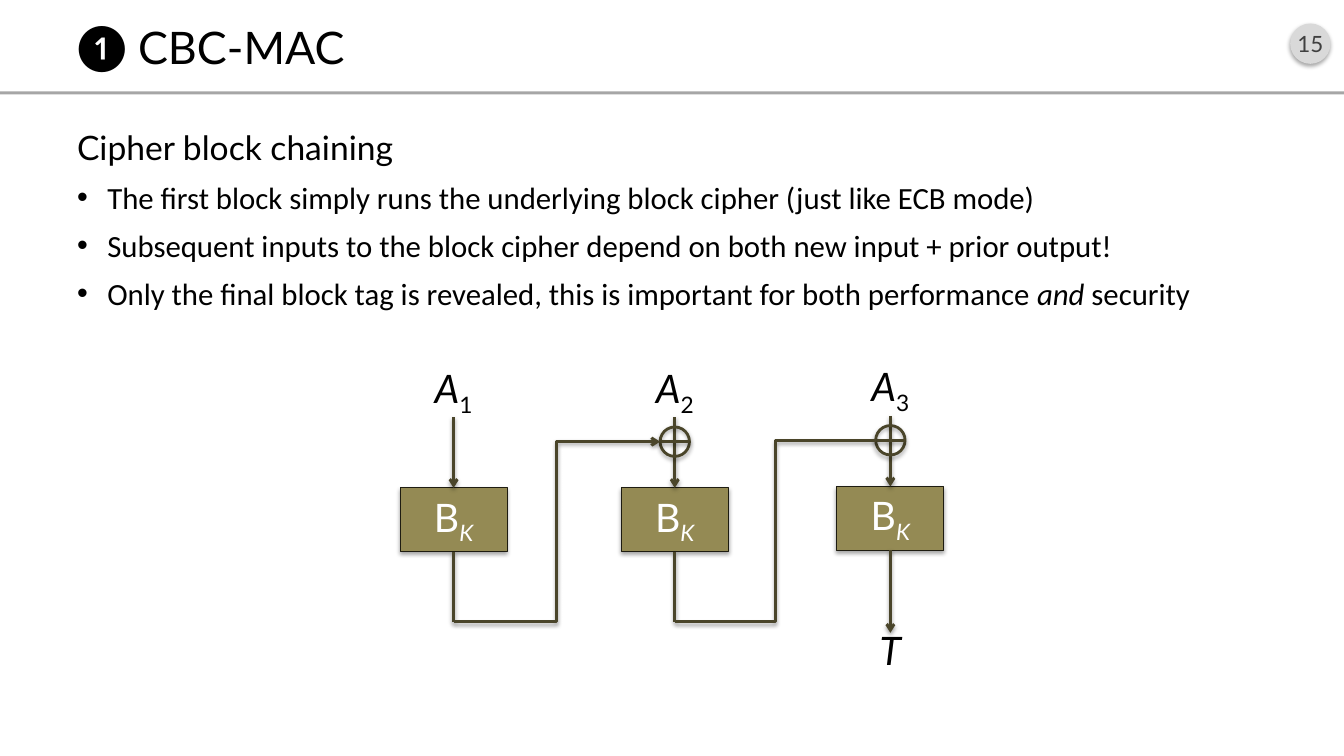
from lxml import etree
from pptx import Presentation
from pptx.dml.color import RGBColor
from pptx.enum import shapes, text
from pptx.oxml import ns
from pptx.util import Pt

BLACK = RGBColor(0x00, 0x00, 0x00)
WHITE = RGBColor(0xFF, 0xFF, 0xFF)
DARK_GREY = RGBColor(0x40, 0x40, 0x40)
RULE_GREY = RGBColor(0xA6, 0xA6, 0xA6)
BADGE_GREY = RGBColor(0xD9, 0xD9, 0xD9)
OLIVE = RGBColor(0x94, 0x8A, 0x54)
WIRE = RGBColor(0x4A, 0x45, 0x2A)
BOX_EDGE = RGBColor(0x1E, 0x1C, 0x11)

SHAPE = shapes.MSO_SHAPE
STRAIGHT = shapes.MSO_CONNECTOR.STRAIGHT
ELBOW = shapes.MSO_CONNECTOR.ELBOW
CENTER = text.PP_ALIGN.CENTER
MIDDLE = text.MSO_ANCHOR.MIDDLE

# Diagram measures, in points
BOX_WIDTH, BOX_HEIGHT = 76.5, 45.5
WIRE_RISE = 50.5
XOR_SIZE, XOR_RISE = 21, 33
LOOP_DROP = 50
STAGES = [(324, 348.5), (482, 348.5), (636, 347.5)]  # centre x, box top


def add_shadow(item, opacity=35):
    effects = etree.SubElement(item._element.spPr, ns.qn("a:effectLst"))
    shadow = etree.SubElement(effects, ns.qn("a:outerShdw"), blurRad=str(Pt(3.1)),
                              dist=str(Pt(1.8)), dir="5400000", rotWithShape="0")
    color = etree.SubElement(shadow, ns.qn("a:srgbClr"), val="000000")
    etree.SubElement(color, ns.qn("a:alpha"), val=str(opacity * 1000))


def add_span(para, words, size=28, color=BLACK, font="Lato", italic=False, subscript=False):
    span = para.add_run()
    span.text = words
    span.font.size = Pt(size)
    span.font.name = font
    span.font.italic = italic
    span.font.color.rgb = color
    if subscript:
        span._r.get_or_add_rPr().set("baseline", "-25000")


def add_bullet(para, indent=21.6):
    props = para._p.get_or_add_pPr()
    props.set("marL", str(Pt(indent)))
    props.set("indent", str(-Pt(indent)))
    etree.SubElement(props, ns.qn("a:buFont"), typeface="Arial")
    etree.SubElement(props, ns.qn("a:buChar"), char="•")


def add_box(page, left, top, width, height, anchor=text.MSO_ANCHOR.TOP, align=None):
    """Add a wrapping text box and return its first paragraph."""
    box = page.shapes.add_textbox(Pt(left), Pt(top), Pt(width), Pt(height))
    box.text_frame.word_wrap = True
    box.text_frame.vertical_anchor = anchor
    para = box.text_frame.paragraphs[0]
    para.alignment = align
    return box, para


def add_shape(page, kind, left, top, width, height, fill=None, edge=None, weight=0.75,
              shadow=True):
    shape = page.shapes.add_shape(kind, Pt(left), Pt(top), Pt(width), Pt(height))
    if fill is None:
        shape.fill.background()
    else:
        shape.fill.solid()
        shape.fill.fore_color.rgb = fill
    if edge is None:
        shape.line.fill.background()
    else:
        shape.line.color.rgb = edge
        shape.line.width = Pt(weight)
    if shadow:
        add_shadow(shape)
    else:
        shape.shadow.inherit = False
    frame = shape.text_frame
    frame.vertical_anchor = MIDDLE
    frame.paragraphs[0].alignment = CENTER
    return shape


def add_wire(page, x1, y1, x2, y2, kind=STRAIGHT, arrow=False):
    wire = page.shapes.add_connector(kind, Pt(x1), Pt(y1), Pt(x2), Pt(y2))
    wire.line.color.rgb = WIRE
    wire.line.width = Pt(2)
    if arrow:
        etree.SubElement(wire.line._get_or_add_ln(), ns.qn("a:tailEnd"), type="arrow")
    add_shadow(wire, opacity=38)


def add_label(page, center, top, letter, index=""):
    para = add_box(page, center - 36, top, 72, 41, align=CENTER)[1]
    add_span(para, letter, italic=True)
    if index:
        add_span(para, index, subscript=True)


def add_header(page):
    badge = add_shape(page, SHAPE.OVAL, 921.6, 16.8, 28.8, 28.8, fill=BADGE_GREY)
    badge.text_frame.margin_left = badge.text_frame.margin_right = 0
    add_span(badge.text_frame.paragraphs[0], "15", size=16, color=DARK_GREY)
    add_shape(page, SHAPE.RECTANGLE, 0, 65.3, 960, 2.2, fill=RULE_GREY, shadow=False)
    add_span(add_box(page, 48, 11.5, 864, 43.2, anchor=MIDDLE)[1], "❶ CBC-MAC", size=32)


def add_body(page):
    box, heading = add_box(page, 48, 87, 864, 414)
    heading.space_before = Pt(8)
    add_span(heading, "Cipher block chaining", size=24)
    bullets = [
        ["The first block simply runs the underlying block cipher (just like ECB mode)"],
        ["Subsequent inputs to the block cipher depend on both new input + prior output!"],
        ["Only the final block tag is revealed, this is important for both performance ",
         "and", " security"],
    ]
    for parts in bullets:
        para = box.text_frame.add_paragraph()
        para.space_before = Pt(8)
        add_bullet(para)
        for part in parts:
            add_span(para, part, size=22, font="Calibri", italic=part == "and")


def add_stage(page, number, center, top):
    """Draw one cipher block with its input above and its output below."""
    last = number == len(STAGES)
    bottom = top + BOX_HEIGHT
    box = add_shape(page, SHAPE.RECTANGLE, center - BOX_WIDTH / 2, top, BOX_WIDTH, BOX_HEIGHT,
                    fill=OLIVE, edge=BOX_EDGE)
    para = box.text_frame.paragraphs[0]
    add_span(para, "B", color=WHITE)
    add_span(para, "K", color=WHITE, italic=True, subscript=True)
    add_wire(page, center, top - WIRE_RISE, center, top, arrow=True)
    add_wire(page, center, bottom, center, bottom + (59 if last else LOOP_DROP), arrow=last)
    add_label(page, center, top - 92, "A", str(number))
    if last:
        add_label(page, center, bottom + 51, "T")


def add_chain(page, source, target, arrow):
    """Feed the output of one stage into the XOR above the next."""
    (from_x, from_top), (to_x, to_top) = source, target
    left, middle = to_x - XOR_SIZE / 2, to_top - XOR_RISE
    add_shape(page, SHAPE.OVAL, left, middle - XOR_SIZE / 2, XOR_SIZE, XOR_SIZE,
              edge=WIRE, weight=2)
    add_wire(page, left, middle, left + XOR_SIZE, middle)
    add_wire(page, from_x, from_top + BOX_HEIGHT + LOOP_DROP, left, middle,
             kind=ELBOW, arrow=arrow)


def main():
    deck = Presentation()
    deck.slide_width, deck.slide_height = Pt(960), Pt(540)
    page = deck.slides.add_slide(deck.slide_layouts[6])
    add_header(page)
    add_body(page)
    # Cipher blocks, then the links between them
    for number, (center, top) in enumerate(STAGES, start=1):
        add_stage(page, number, center, top)
    add_chain(page, STAGES[0], STAGES[1], arrow=True)
    add_chain(page, STAGES[1], STAGES[2], arrow=False)
    deck.save("out.pptx")


if __name__ == "__main__":
    main()
